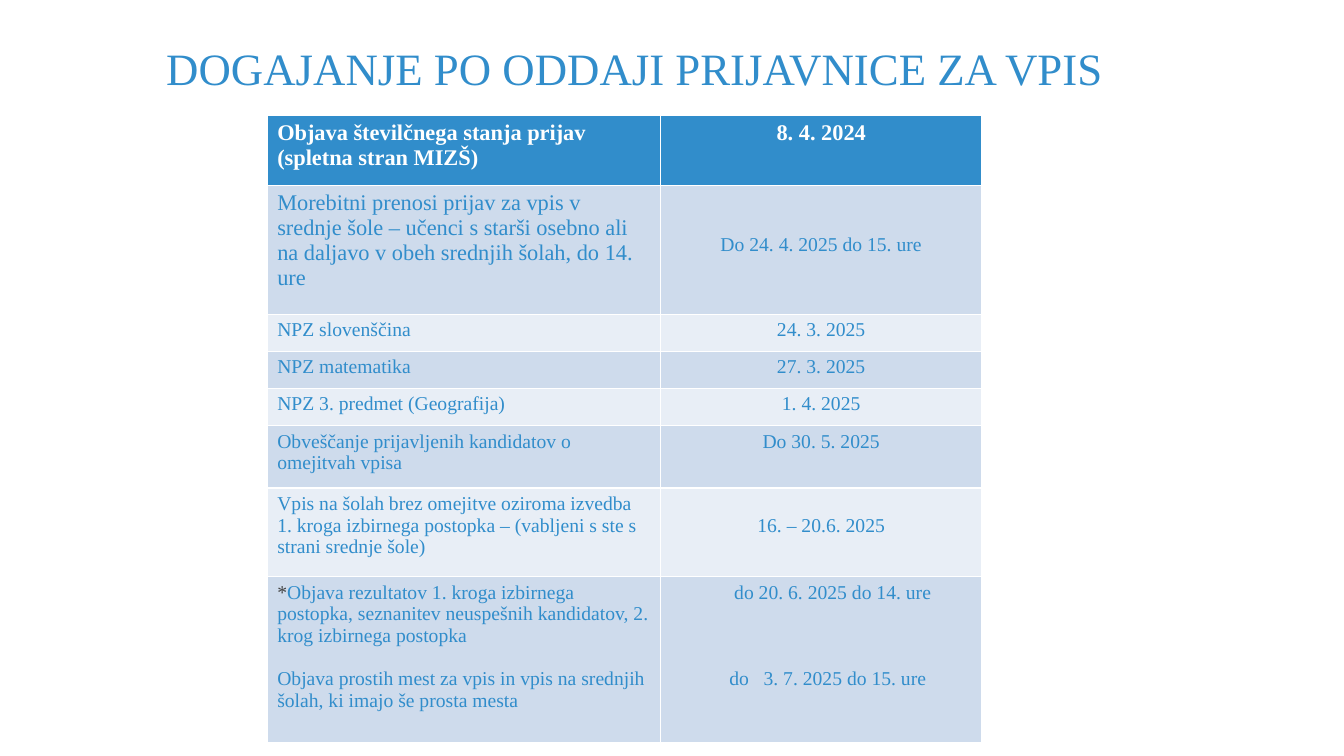
from dataclasses import dataclass

from pptx import Presentation
from pptx.dml.color import RGBColor
from pptx.enum.text import MSO_ANCHOR, MSO_AUTO_SIZE, PP_ALIGN as Align
from pptx.util import Emu, Inches, Length, Pt

WIDTH, HEIGHT = Inches(13.33), Inches(7.5)
FONT = "Times New Roman"
BLUE, WHITE, GREY = "318DCB", "FFFFFF", "404040"
BANDS = ("E8EEF6", "CEDBEC")
LINE = 15.5  # height in points of one line of 14 pt text


@dataclass(frozen=True)
class Para:
    text: str
    align: Align = Align.LEFT
    before: float = 0  # points
    left: float = 0  # points
    hanging: float = 0  # points
    star: bool = False


@dataclass(frozen=True)
class Event:
    height: float  # percent of the slide height
    what: tuple[Para, ...]
    when: tuple[Para, ...]
    skipped_lines: int = 0  # lines left free above the date
    size: int = 14


def event(height: float, what: str, when: str, skipped_lines: int = 0, size: int = 14) -> Event:
    return Event(height, (Para(what),), (Para(when, Align.CENTER),), skipped_lines, size)


EVENTS = (
    event(9.2, "Objava številčnega stanja prijav (spletna stran MIZŠ)", "8. 4. 2024", size=16),
    event(17.07, "Morebitni prenosi prijav za vpis v srednje šole – učenci s starši osebno ali "
          "na daljavo v obeh srednjih šolah, do 14. ure", "Do 24. 4. 2025 do 15. ure", 2, 16),
    event(4.9, "NPZ slovenščina", "24. 3. 2025"),
    event(4.9, "NPZ matematika", "27. 3. 2025"),
    event(4.9, "NPZ 3. predmet (Geografija)", "1. 4. 2025"),
    event(8.27, "Obveščanje prijavljenih kandidatov o omejitvah vpisa", "Do 30. 5. 2025"),
    event(11.73, "Vpis na šolah brez omejitve oziroma izvedba 1. kroga izbirnega postopka – "
          "(vabljeni s ste s strani srednje šole)", "16. – 20.6. 2025", 1),
    Event(22, (
        Para("Objava rezultatov 1. kroga izbirnega postopka, seznanitev neuspešnih kandidatov, "
             "2. krog izbirnega postopka", star=True),
        Para("Objava prostih mest za vpis in vpis na srednjih šolah, ki imajo še prosta mesta",
             before=LINE),
    ), (
        Para("do 20. 6. 2025 do 14. ure", left=45.5),
        Para("do\t3. 7. 2025 do 15. ure", before=3 * LINE, left=66.5, hanging=24.5),
    )),
)


def across(percent: float) -> Length:
    return Emu(round(WIDTH * percent / 100))


def down(percent: float) -> Length:
    return Emu(round(HEIGHT * percent / 100))


def rgb(color: str) -> RGBColor:
    return RGBColor.from_string(color)


def add_run(p, text: str, size: float, color: str, bold: bool = False) -> None:
    r = p.add_run()
    r.text = text
    r.font.name, r.font.size, r.font.bold = FONT, Pt(size), bold
    r.font.color.rgb = rgb(color)


def fill_cell(cell, paras: tuple[Para, ...], size: int, color: str, fill: str, bold: bool) -> None:
    cell.fill.solid()
    cell.fill.fore_color.rgb = rgb(fill)
    tf = cell.text_frame
    for i, para in enumerate(paras):
        p = tf.add_paragraph() if i else tf.paragraphs[0]
        p.alignment = para.align
        if para.before:
            p.space_before = Pt(para.before)
        if para.left:
            pPr = p._p.get_or_add_pPr()
            pPr.set("marL", str(Pt(para.left)))
            pPr.set("indent", str(-Pt(para.hanging)))
        if para.star:
            add_run(p, "*", size, GREY)
        add_run(p, para.text, size, color, bold)


def add_title(slide, text: str) -> None:
    sp = slide.shapes.title
    sp.left, sp.top = across(6.9), down(5.33)
    sp.width, sp.height = across(80.65), down(7.87)
    tf = sp.text_frame
    tf.auto_size, tf.vertical_anchor = MSO_AUTO_SIZE.NONE, MSO_ANCHOR.BOTTOM
    p = tf.paragraphs[0]
    p.alignment, p.line_spacing = Align.CENTER, 0.9
    add_run(p, text, 32, BLUE)


def add_schedule(slide) -> None:
    widths = (29.26, 23.93)
    table = slide.shapes.add_table(
        len(EVENTS), len(widths), across(19.88), down(15.33),
        across(sum(widths)), down(sum(e.height for e in EVENTS))).table
    for column, width in zip(table.columns, widths):
        column.width = across(width)
    for i, e in enumerate(EVENTS):
        table.rows[i].height = down(e.height)
        header = i == 0
        color, fill = (WHITE, BLUE) if header else (BLUE, BANDS[i % 2])
        what, when = table.cell(i, 0), table.cell(i, 1)
        fill_cell(what, e.what, e.size, color, fill, header)
        fill_cell(when, e.when, e.size if header else 14, color, fill, header)
        when.margin_top = Inches(0.05) + Pt(e.skipped_lines * LINE)


def main() -> None:
    prs = Presentation()
    prs.slide_width, prs.slide_height = WIDTH, HEIGHT
    slide = prs.slides.add_slide(prs.slide_layouts[5])
    add_title(slide, "DOGAJANJE PO ODDAJI PRIJAVNICE ZA VPIS")
    add_schedule(slide)
    prs.save("out.pptx")


if __name__ == "__main__":
    main()
